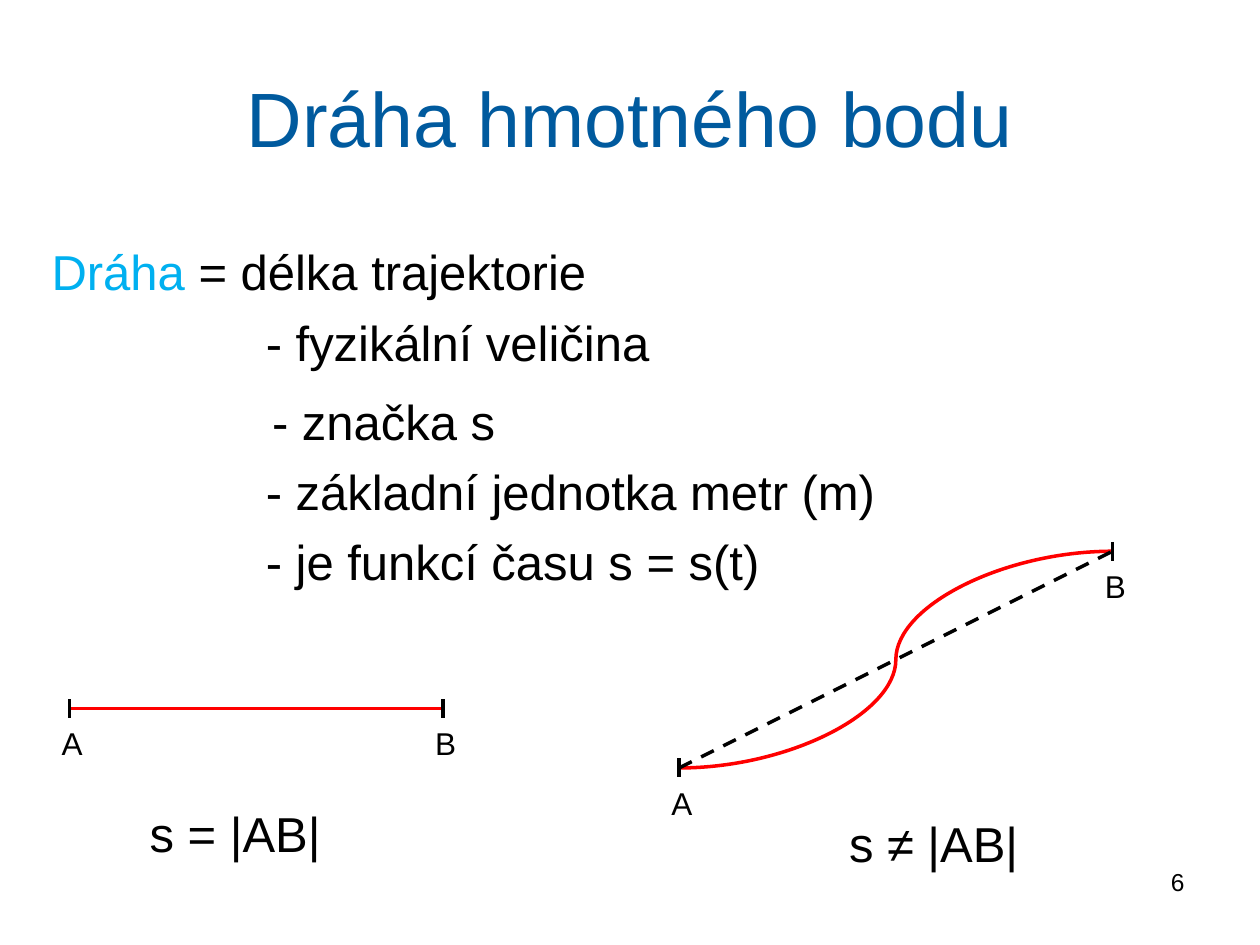
from lxml import etree
from pptx import Presentation
from pptx import util as u
from pptx.dml.color import RGBColor
from pptx.enum import dml, shapes, text
from pptx.oxml import ns

BLUE = RGBColor(0x00, 0x5A, 0x9E)
CYAN = RGBColor(0x00, 0xB0, 0xF0)
RED = RGBColor(0xFF, 0x00, 0x00)
BLACK = RGBColor(0x00, 0x00, 0x00)
COLS, ROWS = 100, 75


def add_run(p, content, size=28, color=BLACK, font="Arial"):
    r = p.add_run()
    r.text = content
    r.font.name, r.font.size, r.font.color.rgb = font, u.Pt(size), color


class SlideBuilder:
    def __init__(self, prs):
        self.prs = prs
        self.s = prs.slides.add_slide(prs.slide_layouts[1])

    def x(self, col):
        return round(self.prs.slide_width * col / COLS)

    def y(self, row):
        return round(self.prs.slide_height * row / ROWS)

    def place(self, sp, col, row, width, height):
        sp.left, sp.top = self.x(col), self.y(row)
        sp.width, sp.height = self.x(width), self.y(height)

    def title(self, content, *box):
        sp = self.s.shapes.title
        self.place(sp, *box)
        tf = sp.text_frame
        tf.vertical_anchor = text.MSO_ANCHOR.MIDDLE
        p = tf.paragraphs[0]
        p.alignment = text.PP_ALIGN.CENTER
        add_run(p, content, size=44, color=BLUE)

    def body(self, items, *box):
        sp = self.s.placeholders[1]
        self.place(sp, *box)
        tf = sp.text_frame
        tf.auto_size = text.MSO_AUTO_SIZE.NONE
        tf.vertical_anchor = text.MSO_ANCHOR.TOP
        for i, (indent, before, runs) in enumerate(items):
            p = tf.paragraphs[0] if i == 0 else tf.add_paragraph()
            pPr = p._p.get_or_add_pPr()
            pPr.set("marL", str(self.x(indent)))
            pPr.set("indent", "0")
            etree.SubElement(pPr, ns.qn("a:buNone"))
            p.space_before = u.Pt(before)
            for content, color in runs:
                add_run(p, content, color=color)

    def label(self, content, col, row, width, height, size=28, parent=None,
              align=text.PP_ALIGN.LEFT, wrap=False):
        sp = (parent or self.s).shapes.add_textbox(
            self.x(col), self.y(row), self.x(width), self.y(height))
        tf = sp.text_frame
        tf.word_wrap = wrap
        if not wrap:
            tf.auto_size = text.MSO_AUTO_SIZE.SHAPE_TO_FIT_TEXT
        p = tf.paragraphs[0]
        p.alignment = align
        add_run(p, content, size=size)

    def line(self, parent, start, end, color=BLACK, dash=None,
             kind=shapes.MSO_CONNECTOR.STRAIGHT):
        (c1, r1), (c2, r2) = start, end
        sp = parent.shapes.add_connector(
            kind, self.x(c1), self.y(r1), self.x(c2), self.y(r2))
        sp.line.color.rgb, sp.line.width = color, u.Pt(2)
        if dash:
            sp.line.dash_style = dash
        etree.SubElement(sp._element.spPr, ns.qn("a:effectLst"))

    def trajectory(self, a, b, curved=False):
        grp = self.s.shapes.add_group_shape()
        kind = shapes.MSO_CONNECTOR.CURVE if curved else shapes.MSO_CONNECTOR.STRAIGHT
        self.line(grp, a, b, RED, kind=kind)
        if curved:
            self.line(grp, a, b, dash=dml.MSO_LINE.DASH)
        for name, (col, row) in (("A", a), ("B", b)):
            self.line(grp, (col, row - 0.75), (col, row + 0.75))
            self.label(name, col - 1.6, row + 0.75, 3.7, 4, size=18, parent=grp)


def main():
    prs = Presentation()
    prs.slide_width, prs.slide_height = u.Inches(10), u.Inches(7.5)
    b = SlideBuilder(prs)
    b.title("Dráha hmotného bodu", 5, 3, 90, 12.5)
    b.body([
        (0, 0, [("Dráha", CYAN), (" = délka trajektorie", BLACK)]),
        (17, 6.5, [("- fyzikální veličina", BLACK)]),
        (17.5, 11.5, [("- značka s", BLACK)]),
        (17, 6.5, [("- základní jednotka metr (m)", BLACK)]),
        (17, 6.5, [("- je funkcí času s = s(t)", BLACK)]),
    ], 3.1, 18.7, 90, 49.5)
    b.label("6", 71.7, 68.3, 23.3, 5.2, size=14,
            align=text.PP_ALIGN.RIGHT, wrap=True)
    b.trajectory((5.5, 56.25), (35.15, 56.25))
    b.trajectory((53.9, 60.95), (88.3, 43.75), curved=True)
    b.label("s = |AB|", 10.9, 63.3, 15.7, 5.7)
    b.label("s ≠ |AB|", 66.4, 64.1, 15.6, 5.7)
    prs.save("out.pptx")


if __name__ == "__main__":
    main()
